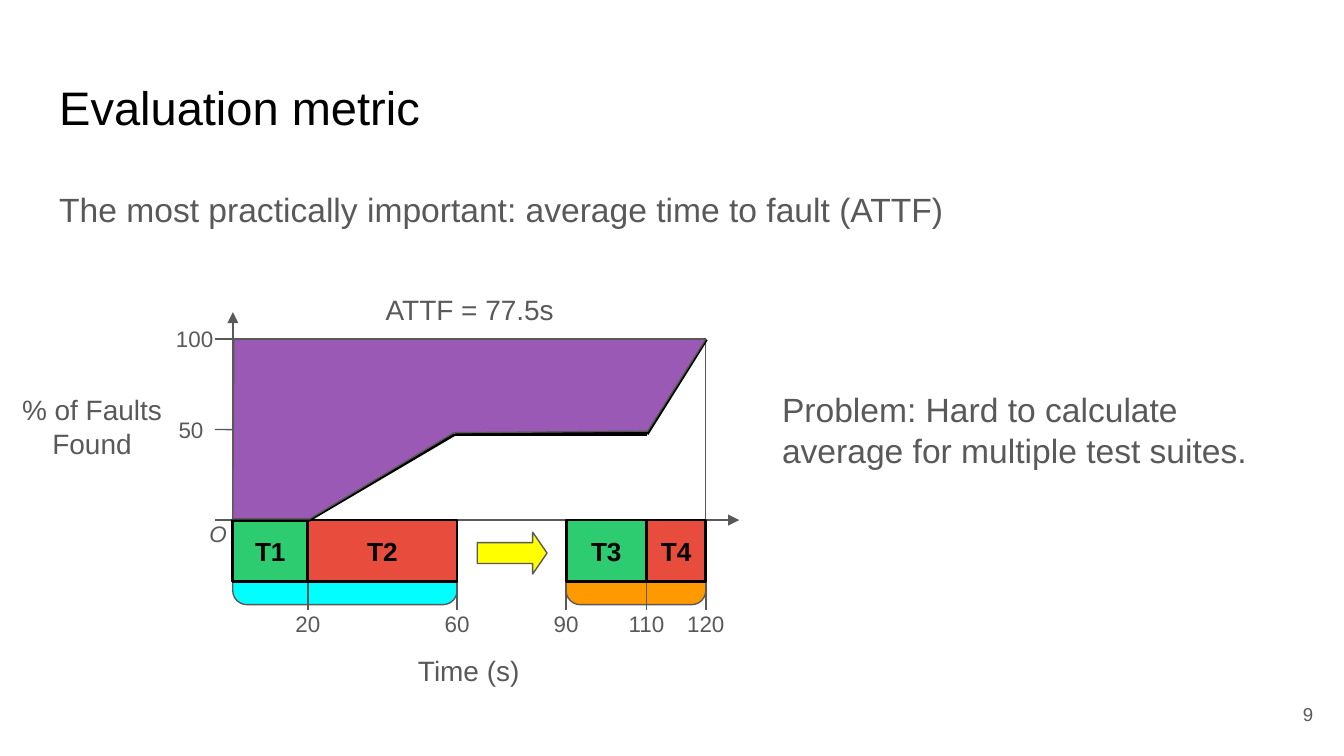
from dataclasses import dataclass

from lxml import etree
from pptx import Presentation
from pptx import util as u
from pptx.dml.color import RGBColor
from pptx.enum import shapes, text
from pptx.oxml import ns


@dataclass(frozen=True)
class Theme:
    font: str = "Arial"
    black: str = "000000"
    grey: str = "595959"
    white: str = "FFFFFF"
    green: str = "2ECC71"
    red: str = "E74C3C"
    purple: str = "9B59B6"
    cyan: str = "00FFFF"
    orange: str = "FF9900"
    yellow: str = "FFFF00"
    title: float = 25.2
    body: float = 18
    label: float = 15
    block: float = 14
    tick: float = 12
    number: float = 10
    thin: float = 0.75
    border: float = 1.5
    curve: float = 2.25


theme = Theme()
Kind = shapes.MSO_SHAPE
Align = text.PP_ALIGN
Anchor = text.MSO_ANCHOR


def style(shape, colour, weight, fill=None):
    """Outline a shape or connector; shapes also get a fill."""
    shape.line.color.rgb = RGBColor.from_string(colour)
    shape.line.width = u.Pt(weight)
    if fill:
        shape.shadow.inherit = False
        shape.fill.solid()
        shape.fill.fore_color.rgb = RGBColor.from_string(fill)
    else:
        etree.SubElement(shape._element.spPr, ns.qn("a:effectLst"))


def write(shape, content, size, colour=theme.grey, align=Align.CENTER,
          anchor=Anchor.TOP, bold=False, italic=False):
    frame = shape.text_frame
    frame.word_wrap = True
    frame.vertical_anchor = anchor
    frame.margin_left = frame.margin_right = u.Cm(0.25)
    frame.margin_top = frame.margin_bottom = u.Cm(0.25)
    paragraph = frame.paragraphs[0]
    paragraph.alignment = align
    run = paragraph.add_run()
    run.text = content
    run.font.name = theme.font
    run.font.size = u.Pt(size)
    run.font.bold = bold
    run.font.italic = italic
    run.font.color.rgb = RGBColor.from_string(colour)
    return paragraph


presentation = Presentation()
presentation.slide_width = u.Cm(25.4)
presentation.slide_height = u.Cm(14.29)
slide = presentation.slides.add_slide(presentation.slide_layouts[6])

# Diagram grid in centimetres: horizontal place of each time, vertical levels
time_x = {0: 4.4, 20: 5.82, 60: 8.64, 90: 10.7, 110: 12.22, 120: 13.34}
full_y, half_y, base_y = 6.41, 8.2, 9.83
block_bottom, suite_bottom, tick_bottom = 11, 11.43, 11.53
tick_left = 4.06

# Test suites behind the blocks, with the plot area and the arrow between them
backdrops = [
    (Kind.ROUNDED_RECTANGLE, time_x[90], base_y, time_x[120], suite_bottom, theme.orange),
    (Kind.ROUNDED_RECTANGLE, time_x[0], base_y, time_x[60], suite_bottom, theme.cyan),
    (Kind.RIGHT_ARROW, 9.02, 10.06, 10.34, 10.85, theme.yellow),
    (Kind.RECTANGLE, time_x[0], full_y, time_x[120], base_y, theme.white),
]
for kind, left, top, right, bottom, fill in backdrops:
    shape = slide.shapes.add_shape(
        kind, u.Cm(left), u.Cm(top), u.Cm(right - left), u.Cm(bottom - top))
    style(shape, theme.grey, theme.thin, fill)
    if kind == Kind.RIGHT_ARROW:
        shape.adjustments[1] = 0.66 * 0.52
plot = shape

# Axes and ticks
axes = [(time_x[0], 10.62, time_x[0], 5.9), (tick_left, base_y, 13.97, base_y)]
ticks = [(x, block_bottom, x, tick_bottom) for time, x in time_x.items() if time]
ticks.append((time_x[0], full_y, tick_left, full_y))
for ends in axes + ticks:
    line = slide.shapes.add_connector(
        shapes.MSO_CONNECTOR.STRAIGHT, *(u.Cm(value) for value in ends))
    style(line, theme.grey, theme.thin)
    if ends in axes:
        etree.SubElement(line.line._get_or_add_ln(), ns.qn("a:tailEnd"), type="triangle")

half_tick = slide.shapes.add_connector(
    shapes.MSO_CONNECTOR.STRAIGHT, u.Cm(time_x[0]), u.Cm(8.12), u.Cm(tick_left), u.Cm(8.12))
half_tick.begin_connect(plot, 1)
style(half_tick, theme.grey, theme.thin)

# Test blocks
blocks = [("T1", 0, 20, theme.green), ("T2", 20, 60, theme.red),
          ("T3", 90, 110, theme.green), ("T4", 110, 120, theme.red)]
for name, start, end, fill in blocks:
    block = slide.shapes.add_shape(
        Kind.RECTANGLE, u.Cm(time_x[start]), u.Cm(base_y),
        u.Cm(time_x[end] - time_x[start]), u.Cm(block_bottom - base_y))
    style(block, theme.black, theme.border, fill)
    write(block, name, theme.block, theme.black, anchor=Anchor.MIDDLE, bold=True)

# Fault curve
curve = [(time_x[0], base_y), (time_x[20], base_y), (8.59, half_y),
         (time_x[110], half_y), (time_x[120], full_y)]
for start, end in zip(curve, curve[1:]):
    segment = slide.shapes.add_connector(
        shapes.MSO_CONNECTOR.STRAIGHT, *(u.Cm(value) for value in start + end))
    style(segment, theme.black, theme.curve)

# Area above the curve
outline = [(4.4, 9.81), (5.85, 9.81), (8.58, 8.18), (12.24, 8.15),
           (time_x[120], full_y), (4.42, full_y)]
corners = [(u.Cm(x), u.Cm(y)) for x, y in outline]
builder = slide.shapes.build_freeform(*corners[0])
builder.add_line_segments(corners[1:], close=True)
style(builder.convert_to_shape(), theme.grey, theme.thin, theme.purple)

# Diagram labels: left, top, width, height, wording, size, anchor
labels = [
    (3.1, 7.62, 1.02, 1.02, "50", theme.tick, Anchor.TOP),
    (3.02, 5.9, 1.32, 1.02, "100", theme.tick, Anchor.TOP),
    (0, 7.49, 3.48, 1.14, "% of Faults Found", theme.label, Anchor.MIDDLE),
    (7.6, 12.1, 2.52, 1.14, "Time (s)", theme.label, Anchor.MIDDLE),
    (5.36, 5.28, 7.04, 1.14, "ATTF = 77.5s", theme.label, Anchor.TOP),
]
labels += [(x - 0.62, 11.28, 1.24, 1.02, str(time), theme.tick, Anchor.TOP)
           for time, x in time_x.items() if time]
for *place, content, size, anchor in labels:
    box = slide.shapes.add_textbox(*(u.Cm(value) for value in place))
    write(box, content, size, anchor=anchor)

origin = slide.shapes.add_textbox(u.Cm(3.71), u.Cm(9.58), u.Cm(0.9), u.Cm(1.02))
write(origin, "O", theme.tick, align=Align.LEFT, italic=True)

# Title, statement, problem and slide number
title = slide.shapes.add_textbox(u.Cm(0.87), u.Cm(1.24), u.Cm(23.67), u.Cm(1.6))
write(title, "Evaluation metric", theme.title, theme.black, Align.LEFT)

statement = slide.shapes.add_textbox(u.Cm(0.87), u.Cm(3.2), u.Cm(23.67), u.Cm(1.83))
paragraph = write(statement, "The most practically important: average time to fault (ATTF)",
                  theme.body, align=Align.LEFT)
paragraph.line_spacing = 1.15
paragraph.space_after = u.Pt(12)

problem = slide.shapes.add_textbox(u.Cm(14.53), u.Cm(7.11), u.Cm(10), u.Cm(2.06))
write(problem, "Problem: Hard to calculate average for multiple test suites.",
      theme.body, align=Align.LEFT)

number = slide.shapes.add_textbox(u.Cm(23.55), u.Cm(12.95), u.Cm(1.52), u.Cm(1.09))
write(number, "9", theme.number, align=Align.RIGHT, anchor=Anchor.MIDDLE)

presentation.save("out.pptx")
